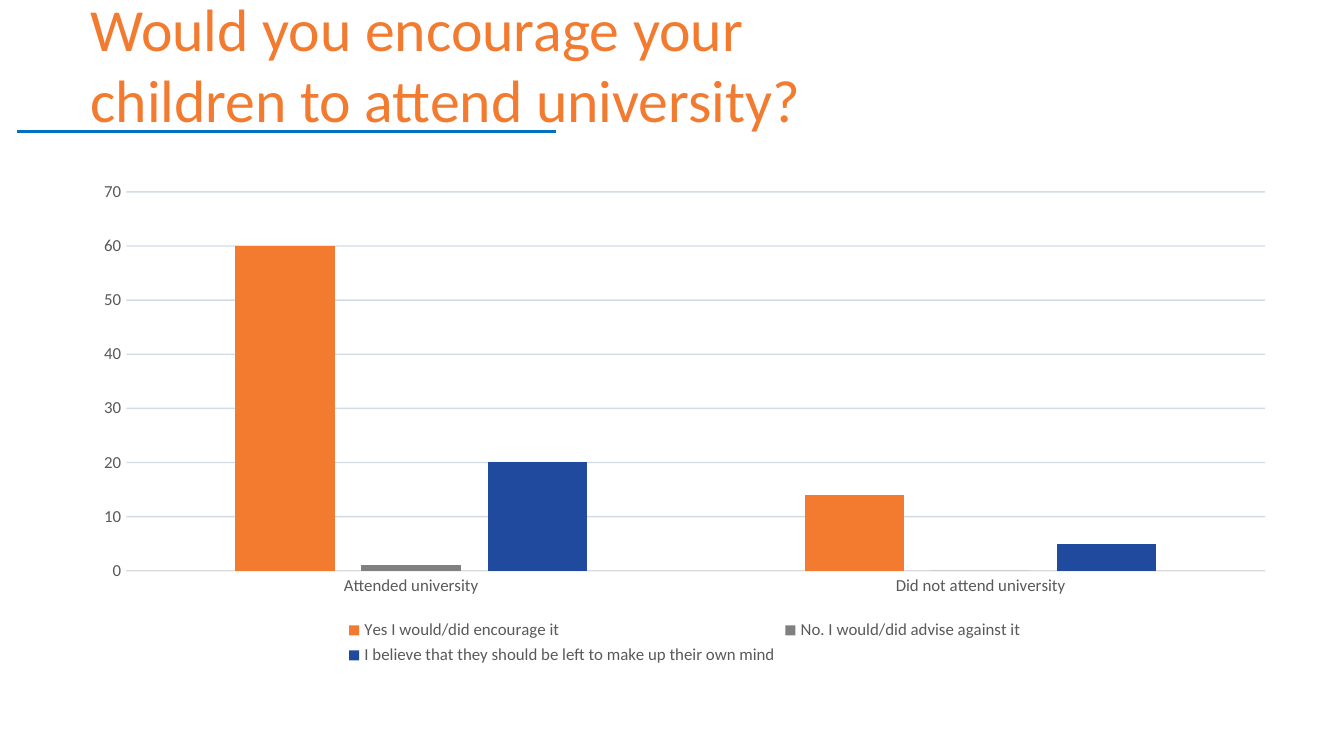
from collections import namedtuple
from dataclasses import dataclass

from lxml import etree
from pptx import Presentation
from pptx.chart.data import CategoryChartData
from pptx.dml.color import RGBColor
from pptx.enum.chart import XL_CHART_TYPE as ChartType
from pptx.enum.chart import XL_LEGEND_POSITION as LegendPosition
from pptx.enum.chart import XL_TICK_MARK as TickMark
from pptx.enum.shapes import MSO_CONNECTOR as Connector
from pptx.enum.text import MSO_ANCHOR as Anchor
from pptx.enum.text import MSO_AUTO_SIZE as AutoSize
from pptx.enum.text import PP_ALIGN as Align
from pptx.oxml.ns import qn
from pptx.util import Emu, Pt

EMU_PER_PX = 9525  # 96 px to the inch
Box = namedtuple("Box", "left top width height")


@dataclass(frozen=True)
class Theme:
    font: str = "Calibri"
    title_size: int = 32
    chart_size: int = 10
    label_size: int = 9
    orange: str = "F27B30"
    gray: str = "808080"
    blue: str = "204A9E"
    rule: str = "0070C0"
    label: str = "595959"
    axis: str = "D9D9D9"
    grid: str = "3A5F8C"
    black: str = "000000"


THEME = Theme()
CATEGORIES = ["Attended university", "Did not attend university"]
SERIES = [
    ("Yes I would/did encourage it", (60, 14), THEME.orange),
    ("No. I would/did advise against it", (1, 0), THEME.gray),
    ("I believe that they should be left to make up their own mind",
     (20, 5), THEME.blue),
]


def px(length):
    return Emu(length * EMU_PER_PX)


def set_font(font, size, color):
    font.name = THEME.font
    font.size = Pt(size)
    font.color.rgb = RGBColor.from_string(color)


def set_line(line, color, width):
    line.color.rgb = RGBColor.from_string(color)
    line.width = Pt(width)


def write_text(frame, text, *, size, color, align=Align.LEFT,
               anchor=Anchor.MIDDLE):
    frame.word_wrap = True
    frame.auto_size = AutoSize.NONE
    frame.vertical_anchor = anchor
    para = frame.paragraphs[0]
    para.alignment = align
    span = para.add_run()
    span.text = text
    set_font(span.font, size, color)


def place_heading(page, box):
    # Title
    title = page.shapes.title
    title.left, title.top = px(box.left), px(box.top)
    title.width, title.height = px(box.width), px(box.height)
    write_text(title.text_frame,
               "Would you encourage your children to attend university?",
               size=THEME.title_size, color=THEME.orange)

    # Rule under the title
    left, y = box.left - 43, box.top + box.height + 4
    rule = page.shapes.add_connector(
        Connector.STRAIGHT, px(left), px(y), px(left + 385), px(y))
    set_line(rule.line, THEME.rule, 1.5)
    etree.SubElement(rule._element.spPr, qn("a:effectLst"))


def format_axes(chart):
    for axis in (chart.category_axis, chart.value_axis):
        axis.major_tick_mark = axis.minor_tick_mark = TickMark.NONE
        set_font(axis.tick_labels.font, THEME.label_size, THEME.label)
    set_line(chart.category_axis.format.line, THEME.axis, 0.75)

    value_axis = chart.value_axis
    value_axis.minimum_scale, value_axis.maximum_scale = 0, 70
    value_axis.major_unit = 10
    value_axis.format.line.fill.background()
    value_axis.has_major_gridlines = True
    gridlines = value_axis.major_gridlines
    set_line(gridlines.format.line, THEME.grid, 0.75)

    # Gridlines at 22 % opacity
    color = value_axis._element.find(
        qn("c:majorGridlines")).find(".//" + qn("a:srgbClr"))
    etree.SubElement(color, qn("a:alpha"), val="22000")


def place_chart(page, box):
    data = CategoryChartData()
    data.categories = CATEGORIES
    for name, values, _ in SERIES:
        data.add_series(name, values)
    chart = page.shapes.add_chart(
        ChartType.COLUMN_CLUSTERED, *map(px, box), data).chart
    chart.has_title = False
    set_font(chart.font, THEME.chart_size, THEME.black)
    format_axes(chart)

    # Columns
    plot = chart.plots[0]
    plot.gap_width, plot.overlap = 219, -27
    plot.vary_by_categories = False
    for series, (_, _, color) in zip(plot.series, SERIES):
        series.format.fill.solid()
        series.format.fill.fore_color.rgb = RGBColor.from_string(color)

    # Legend
    chart.has_legend = True
    chart.legend.position = LegendPosition.BOTTOM
    chart.legend.include_in_layout = False
    set_font(chart.legend.font, THEME.label_size, THEME.label)


def main():
    deck = Presentation()
    deck.slide_width, deck.slide_height = px(960), px(540)
    page = deck.slides.add_slide(deck.slide_layouts[5])
    place_heading(page, Box(55, 0, 620, 90))
    place_chart(page, Box(57, 123, 864, 356))
    deck.save("out.pptx")


if __name__ == "__main__":
    main()
